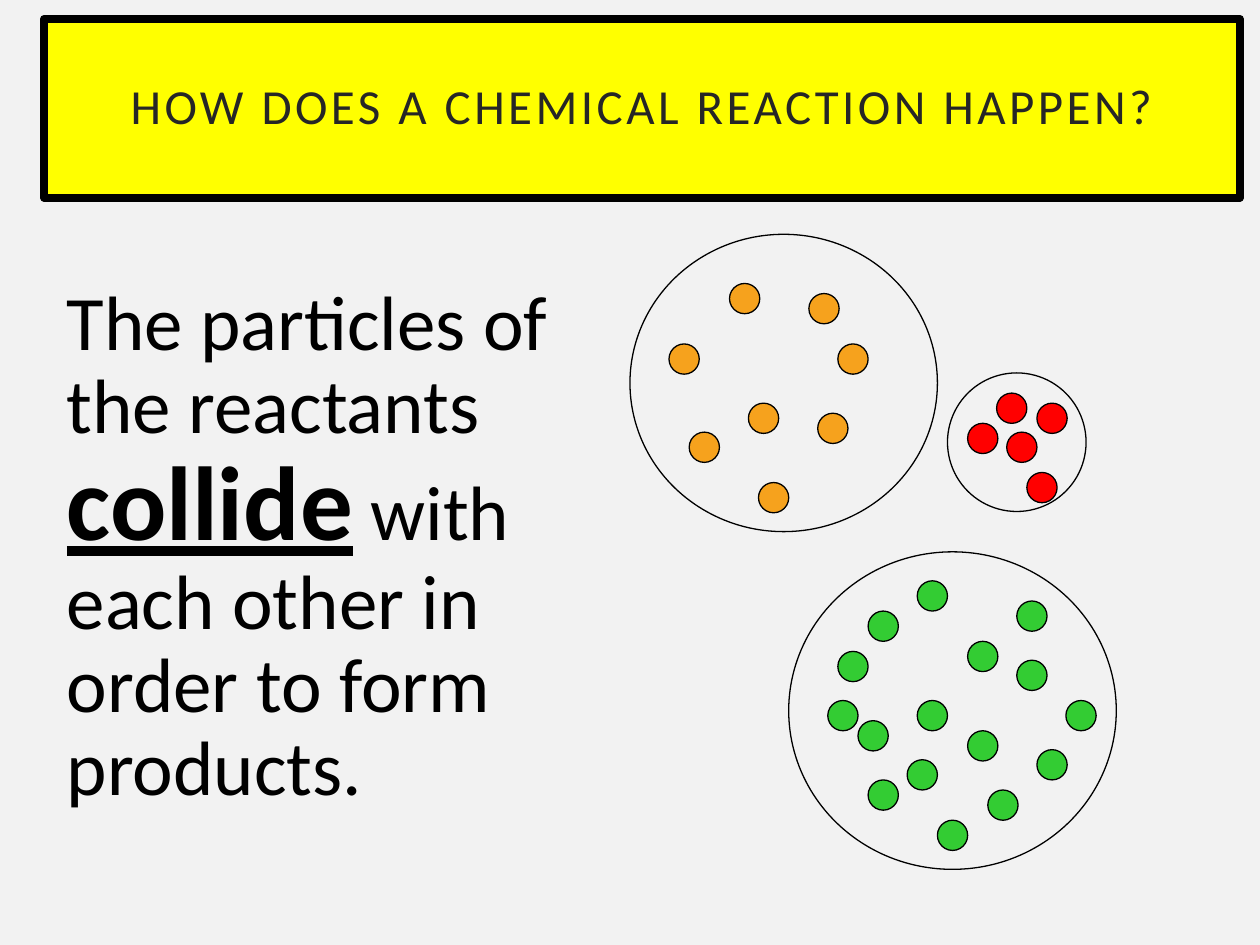
from dataclasses import dataclass

from pptx import Presentation
from pptx import util as u
from pptx.dml.color import RGBColor
from pptx.enum import shapes, text
from pptx.oxml import ns
from lxml import etree


@dataclass(frozen=True)
class Theme:
    font: str = "Calibri"
    background: str = "F2F2F2"
    banner: str = "FFFF00"
    title_text: str = "262626"
    ink: str = "000000"
    orange: str = "F6A21D"
    red: str = "FF0000"
    green: str = "33CC33"
    title_size: int = 28
    body_size: int = 44
    key_size: int = 60
    banner_line: float = 4.5
    thin_line: float = 0.75


THEME = Theme()
PARTICLE = 0.24

# Each vessel: box, particle colour, particle offsets from the box corner
VESSELS = [
    ((5, 1.86, 2.44, 2.36), THEME.orange, [
        (0.31, 0.87), (0.79, 0.39), (1.49, 1.42), (0.47, 1.57),
        (1.65, 0.87), (0.94, 1.34), (1.42, 0.47), (1.02, 1.97)]),
    ((7.52, 2.96, 1.1, 1.1), THEME.red, [
        (0.39, 0.16), (0.16, 0.4), (0.47, 0.47), (0.71, 0.24), (0.63, 0.79)]),
    ((6.26, 4.38, 2.6, 2.52), THEME.green, [
        (0.63, 0.47), (1.02, 0.23), (1.81, 0.86), (0.31, 1.18),
        (1.81, 0.39), (0.63, 1.81), (1.42, 0.71), (0.39, 0.79),
        (0.94, 1.65), (1.18, 2.13), (1.02, 1.18), (1.42, 1.42),
        (0.55, 1.34), (1.97, 1.57), (1.58, 1.89), (2.2, 1.18)]),
]


def color(value):
    return RGBColor.from_string(value)


def place(shape, box):
    shape.left, shape.top, shape.width, shape.height = map(u.Inches, box)


def style_line(shape, width):
    shape.line.color.rgb = color(THEME.ink)
    shape.line.width = u.Pt(width)


def style_font(font, size, ink):
    font.name = THEME.font
    font.size = u.Pt(size)
    font.color.rgb = color(ink)


def add_title(slide, box):
    title = slide.shapes.title
    place(title, box)
    title.fill.solid()
    title.fill.fore_color.rgb = color(THEME.banner)
    style_line(title, THEME.banner_line)

    frame = title.text_frame
    frame.auto_size = text.MSO_AUTO_SIZE.NONE
    frame.vertical_anchor = text.MSO_ANCHOR.MIDDLE
    frame.margin_left = frame.margin_right = u.Inches(0.2)
    frame.margin_top = frame.margin_bottom = u.Inches(0.2)
    paragraph = frame.paragraphs[0]
    paragraph.alignment = text.PP_ALIGN.CENTER
    paragraph.line_spacing = 0.9
    run = paragraph.add_run()
    run.text = "HOW DOES A CHEMICAL REACTION HAPPEN?"
    style_font(paragraph.font, THEME.title_size, THEME.title_text)
    # Letter spacing in hundredths of a point
    run.font._element.set("spc", "200")


def add_body(slide, box):
    body = slide.placeholders[1]
    place(body, box)
    frame = body.text_frame
    frame.auto_size = text.MSO_AUTO_SIZE.NONE
    paragraph = frame.paragraphs[0]
    paragraph.alignment = text.PP_ALIGN.LEFT
    paragraph.line_spacing = 0.9
    paragraph.space_before = u.Pt(10)

    # Plain paragraph: no bullet or hanging indent
    properties = paragraph._p.get_or_add_pPr()
    properties.set("marL", "0")
    properties.set("indent", "0")
    etree.SubElement(properties, ns.qn("a:buNone"))

    for words, is_key in [("The particles of the reactants ", False),
                          ("collide", True),
                          (" with each other in order to form products.", False)]:
        run = paragraph.add_run()
        run.text = words
        size = THEME.key_size if is_key else THEME.body_size
        style_font(run.font, size, THEME.ink)
        run.font.bold = run.font.underline = is_key


def add_circle(group, box, fill=None):
    circle = group.shapes.add_shape(shapes.MSO_SHAPE.OVAL, *map(u.Inches, box))
    circle.shadow.inherit = False
    style_line(circle, THEME.thin_line)
    if fill:
        circle.fill.solid()
        circle.fill.fore_color.rgb = color(fill)
    else:
        circle.fill.background()


def add_vessel(slide, box, fill, offsets):
    group = slide.shapes.add_group_shape()
    add_circle(group, box)
    left, top = box[:2]
    for across, down in offsets:
        add_circle(group, (left + across, top + down, PARTICLE, PARTICLE), fill)


def main():
    presentation = Presentation()
    presentation.slide_width = u.Inches(10)
    presentation.slide_height = u.Inches(7.5)
    slide = presentation.slides.add_slide(presentation.slide_layouts[1])
    slide.background.fill.solid()
    slide.background.fill.fore_color.rgb = color(THEME.background)

    add_title(slide, (0.35, 0.15, 9.49, 1.42))
    add_body(slide, (0.43, 2.2, 4.42, 4.72))
    for box, fill, offsets in VESSELS:
        add_vessel(slide, box, fill, offsets)
    presentation.save("out.pptx")


if __name__ == "__main__":
    main()
